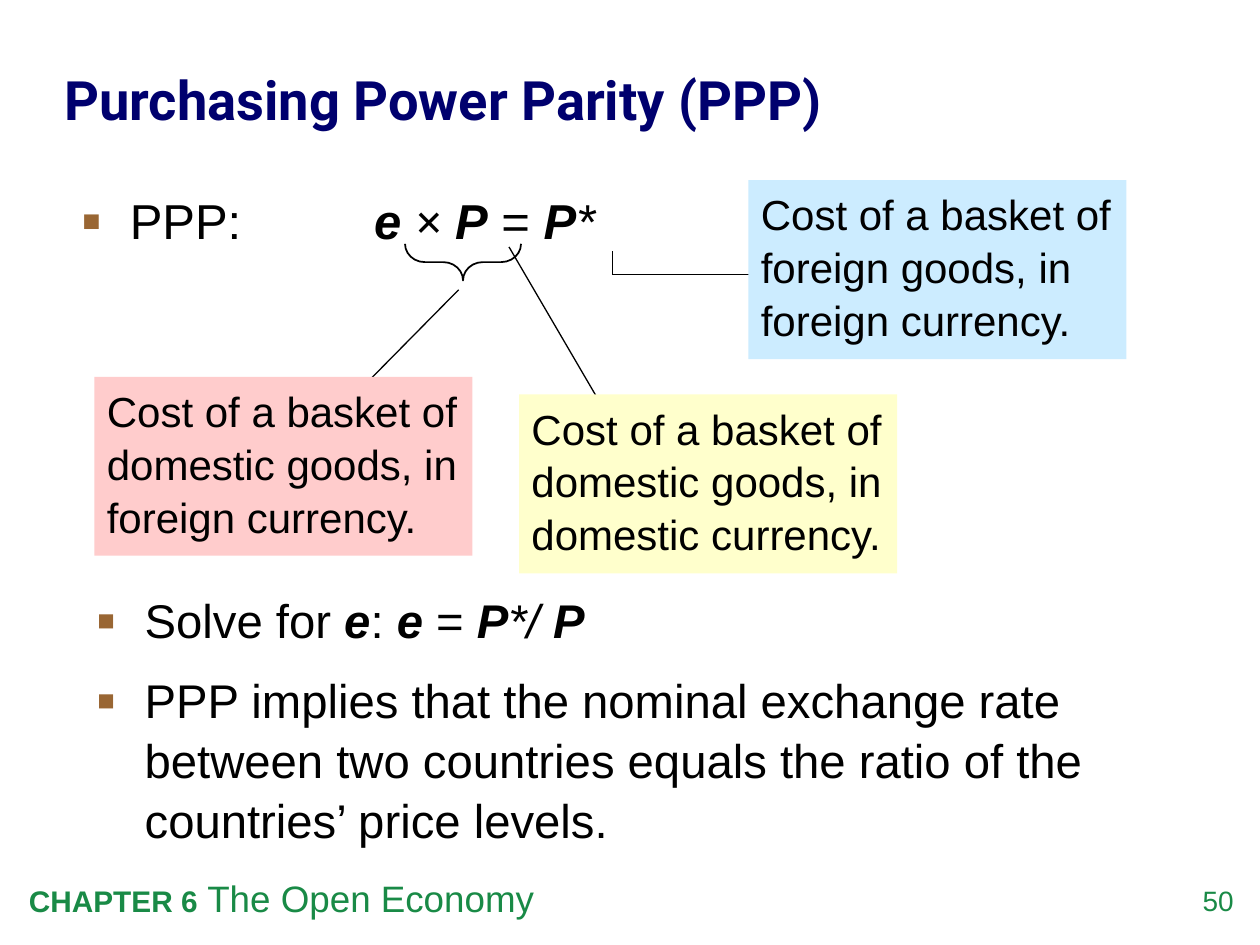
import pptx
import pptx.util
import pptx.dml.color
import pptx.enum.shapes
import pptx.enum.text
import pptx.oxml.ns
import lxml.etree

Inches = pptx.util.Inches
Shapes = pptx.enum.shapes.MSO_SHAPE
Align = pptx.enum.text.PP_ALIGN
Anchor = pptx.enum.text.MSO_ANCHOR
qn = pptx.oxml.ns.qn

COLORS = {
    "title": "00006E", "text": "000000", "bullet": "996633", "footer": "198A46",
    "pink": "FFCCCC", "yellow": "FFFFCC", "blue": "CCECFF",
}
color = {name: pptx.dml.color.RGBColor.from_string(value) for name, value in COLORS.items()}


def write(shape, paragraphs, size, ink="text", font="Arial", bold=False, bullet=False,
          align=Align.LEFT, anchor=Anchor.TOP, margins=True, spacing=1.05):
    """Fill a shape with paragraphs, each a list of (text, format overrides) runs."""
    frame = shape.text_frame
    frame.word_wrap = True
    frame.auto_size = pptx.enum.text.MSO_AUTO_SIZE.NONE
    frame.vertical_anchor = anchor
    if not margins:
        frame.margin_left = frame.margin_right = frame.margin_top = frame.margin_bottom = 0
    for index, runs in enumerate(paragraphs):
        paragraph = frame.add_paragraph() if index else frame.paragraphs[0]
        paragraph.alignment = align
        paragraph.line_spacing = spacing
        paragraph.space_before = pptx.util.Pt(12 if index else 0)
        for text, style in runs:
            run = paragraph.add_run()
            run.text = text
            run.font.name = style.get("font", font)
            run.font.size = pptx.util.Pt(style.get("size", size))
            run.font.bold = style.get("bold", bold)
            run.font.italic = style.get("italic", False)
            run.font.color.rgb = color[ink]
        if bullet:
            properties = paragraph._p.get_or_add_pPr()
            properties.set("marL", str(Inches(0.38)))
            properties.set("indent", str(-Inches(0.38)))
            bullet_color = lxml.etree.SubElement(properties, qn("a:buClr"))
            lxml.etree.SubElement(bullet_color, qn("a:srgbClr"), val=COLORS["bullet"])
            lxml.etree.SubElement(properties, qn("a:buSzPct"), val="120000")
            lxml.etree.SubElement(properties, qn("a:buFont"), typeface="Arial")
            lxml.etree.SubElement(properties, qn("a:buChar"), char="▪")


def place(shape, left, top, width, height):
    shape.left, shape.top = Inches(left), Inches(top)
    shape.width, shape.height = Inches(width), Inches(height)


presentation = pptx.Presentation()
presentation.slide_width, presentation.slide_height = Inches(10), Inches(7.5)
slide = presentation.slides.add_slide(presentation.slide_layouts[1])
shapes = slide.shapes

plain = {}
variable = {"bold": True, "italic": True}
slanted = {"italic": True}

# Footer
page_number = shapes.add_textbox(Inches(9.24), Inches(7.01), Inches(0.55), Inches(0.32))
write(page_number, [[("50", plain)]], 16, ink="footer", align=Align.RIGHT,
      margins=False, spacing=1.0)
chapter = shapes.add_textbox(Inches(0.13), Inches(6.9), Inches(8.18), Inches(0.45))
write(chapter, [[("CHAPTER 6", {"size": 17, "bold": True}), (" The Open Economy", plain)]],
      21, ink="footer", spacing=1.0)

# Title and equation
title = shapes.title
place(title, 0.51, 0.26, 9.02, 1.03)
write(title, [[("Purchasing Power Parity (PPP)", plain)]], 31, ink="title", font="Roboto",
      bold=True, anchor=Anchor.MIDDLE, margins=False)

equation = slide.placeholders[1]
place(equation, 0.55, 1.44, 8.82, 0.65)
write(equation, [[
    ("PPP:\t", plain), ("e ", variable), ("× ", {"bold": True, "font": "Times New Roman"}),
    ("P", variable), (" = ", plain), ("P", variable), ("*", slanted),
]], 28, bullet=True)
tabs = lxml.etree.SubElement(equation.text_frame.paragraphs[0]._p.pPr, qn("a:tabLst"))
lxml.etree.SubElement(tabs, qn("a:tab"), pos=str(Inches(2.32)), algn="l")

# Brace under e × P, turned so that its point faces down
brace = shapes.add_shape(Shapes.LEFT_BRACE, Inches(3.53), Inches(1.62), Inches(0.29), Inches(0.92))
brace.rotation = 270
brace.adjustments[0], brace.adjustments[1] = 0.54, 0.5
brace.shadow.inherit = False
brace.fill.background()
brace.line.color.rgb = color["text"]
brace.line.width = pptx.util.Pt(1)

# Callouts: fill, left, top, wording, points of the leader line
callouts = [
    ("pink", 0.75, 2.99, "Cost of a basket of domestic goods, in foreign currency.",
     [(3.64, 2.3), (2.85, 3.1)]),
    ("yellow", 4.12, 3.13, "Cost of a basket of domestic goods, in domestic currency.",
     [(4.87, 3.38), (4.04, 1.96)]),
    ("blue", 5.94, 1.43, "Cost of a basket of foreign goods, in foreign currency.",
     [(6.11, 2.18), (4.86, 2.18), (4.86, 1.99)]),
]
for fill, left, top, wording, points in callouts:
    for start, end in zip(points, points[1:]):
        leader = shapes.add_connector(pptx.enum.shapes.MSO_CONNECTOR.STRAIGHT,
                                      *map(Inches, start + end))
        leader.line.color.rgb = color["text"]
        leader.line.width = pptx.util.Pt(0.75)
        lxml.etree.SubElement(leader._element.spPr, qn("a:effectLst"))
    box = shapes.add_shape(Shapes.RECTANGLE, Inches(left), Inches(top), Inches(3), Inches(1.42))
    box.shadow.inherit = False
    box.fill.solid()
    box.fill.fore_color.rgb = color[fill]
    box.line.fill.background()
    write(box, [[(wording, plain)]], 24)

# Conclusions
conclusions = shapes.add_textbox(Inches(0.67), Inches(4.62), Inches(8.33), Inches(2.25))
write(conclusions, [
    [("Solve for ", plain), ("e", variable), (": ", plain), ("e ", variable), ("= ", plain),
     ("P", variable), ("*/ ", slanted), ("P", variable)],
    [("PPP implies that the nominal exchange rate between two countries equals "
      "the ratio of the countries’ price levels.", plain)],
], 27, bullet=True)

presentation.save("out.pptx")
